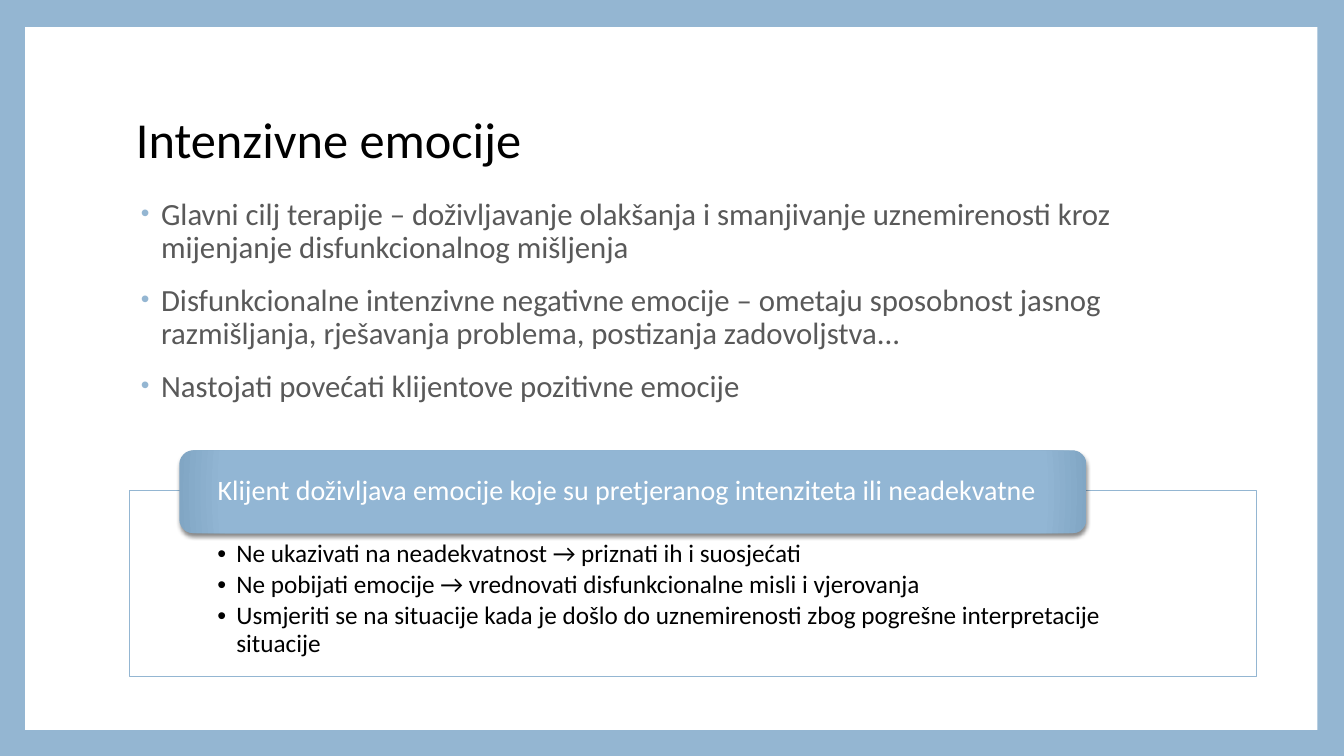
from dataclasses import dataclass

from lxml.etree import SubElement
from pptx import Presentation
from pptx.dml.color import RGBColor
from pptx.enum.shapes import MSO_SHAPE
from pptx.enum.text import MSO_ANCHOR, PP_ALIGN
from pptx.oxml import parse_xml
from pptx.oxml.ns import nsdecls, qn
from pptx.util import Pt


@dataclass(frozen=True)
class Theme:
    font: str = "Calibri"
    accent: str = "94B6D2"
    accent_mid: str = "92B6D4"
    accent_dark: str = "81A6C4"
    white: str = "FFFFFF"
    black: str = "000000"
    grey: str = "595959"
    title_size: float = 36
    body_size: float = 22
    tab_size: float = 20
    panel_size: float = 18


THEME = Theme()

TITLE = "Intenzivne emocije"
GOALS = [
    "Glavni cilj terapije – doživljavanje olakšanja i smanjivanje uznemirenosti kroz "
    "mijenjanje disfunkcionalnog mišljenja",
    "Disfunkcionalne intenzivne negativne emocije – ometaju sposobnost jasnog "
    "razmišljanja, rješavanja problema, postizanja zadovoljstva...",
    "Nastojati povećati klijentove pozitivne emocije",
]
SITUATION = "Klijent doživljava emocije koje su pretjeranog intenziteta ili neadekvatne"
ADVICE = [
    "Ne ukazivati na neadekvatnost → priznati ih i suosjećati",
    "Ne pobijati emocije → vrednovati disfunkcionalne misli i vjerovanja",
    "Usmjeriti se na situacije kada je došlo do uznemirenosti zbog pogrešne "
    "interpretacije situacije",
]


def add_bullet(paragraph, margin, hanging, color, percent):
    properties = paragraph._p.get_or_add_pPr()
    properties.set("marL", str(Pt(margin)))
    properties.set("indent", str(-Pt(hanging)))
    bullet_color = SubElement(properties, qn("a:buClr"))
    SubElement(bullet_color, qn("a:srgbClr"), val=color)
    SubElement(properties, qn("a:buSzPct"), val=str(percent * 1000))
    SubElement(properties, qn("a:buFont"), typeface="Arial")
    SubElement(properties, qn("a:buChar"), char="•")


def write_text(shape, lines, size, color, insets=(7.2, 3.6, 7.2, 3.6),
               anchor=MSO_ANCHOR.TOP, before=0, after=0, bullet=None):
    """Fill a shape with one paragraph per line; bullet holds add_bullet's options."""
    frame = shape.text_frame
    frame.word_wrap = True
    frame.vertical_anchor = anchor
    frame.margin_left, frame.margin_top, frame.margin_right, frame.margin_bottom = map(Pt, insets)
    for index, line in enumerate(lines):
        paragraph = frame.add_paragraph() if index else frame.paragraphs[0]
        paragraph.alignment = PP_ALIGN.LEFT
        paragraph.line_spacing = 0.9
        paragraph.space_before = Pt(before if index else 0)
        paragraph.space_after = Pt(after)
        if bullet:
            add_bullet(paragraph, **bullet)
        run = paragraph.add_run()
        run.text = line
        run.font.name = THEME.font
        run.font.size = Pt(size)
        run.font.color.rgb = RGBColor.from_string(color)


def add_box(slide, kind, box, fill):
    shape = slide.shapes.add_shape(kind, *map(Pt, box))
    shape.shadow.inherit = False
    shape.fill.solid()
    shape.fill.fore_color.rgb = RGBColor.from_string(fill)
    shape.line.fill.background()
    return shape


def add_frame(slide, box):
    slide.background.fill.solid()
    slide.background.fill.fore_color.rgb = RGBColor.from_string(THEME.accent)
    add_box(slide, MSO_SHAPE.RECTANGLE, box, THEME.white)


def add_title(slide, box):
    write_text(slide.shapes.add_textbox(*map(Pt, box)), [TITLE], THEME.title_size,
               THEME.black, anchor=MSO_ANCHOR.MIDDLE)


def add_goals(slide, box):
    write_text(slide.shapes.add_textbox(*map(Pt, box)), GOALS, THEME.body_size,
               THEME.grey, before=14,
               bullet=dict(margin=18, hanging=14.4, color=THEME.accent, percent=80))


def shade_tab(shape):
    """Give the tab its radial gradient and a soft shadow below."""
    properties = shape._element.spPr
    stops = [(0, THEME.accent), (90, THEME.accent_mid), (100, THEME.accent_dark)]
    stop_xml = "".join(
        f'<a:gs pos="{position * 1000}"><a:srgbClr val="{color}"/></a:gs>'
        for position, color in stops)
    gradient = parse_xml(
        f'<a:gradFill {nsdecls("a")} rotWithShape="1"><a:gsLst>{stop_xml}</a:gsLst>'
        '<a:path path="circle"><a:fillToRect l="100000" t="100000" r="100000" b="100000"/>'
        '</a:path></a:gradFill>')
    properties.replace(properties.find(qn("a:solidFill")), gradient)
    properties.find(qn("a:effectLst")).append(parse_xml(
        f'<a:outerShdw {nsdecls("a")} blurRad="{Pt(3)}" dist="{Pt(2)}" dir="5400000" '
        f'rotWithShape="0"><a:srgbClr val="{THEME.black}"><a:alpha val="45000"/>'
        '</a:srgbClr></a:outerShdw>'))


def add_advice(slide, box):
    """Outlined panel of advice with a tab that overlaps its top edge."""
    left, top, _, _ = box
    panel = add_box(slide, MSO_SHAPE.RECTANGLE, box, THEME.white)
    fill_color = panel._element.spPr.find(qn("a:solidFill"))[0]
    SubElement(fill_color, qn("a:alpha"), val="90000")
    panel.line.color.rgb = RGBColor.from_string(THEME.accent)
    panel.line.width = Pt(0.79)
    write_text(panel, ADVICE, THEME.panel_size, THEME.black,
               insets=(62.64, 36, 62.64, 10), after=2.7,
               bullet=dict(margin=13.5, hanging=13.5, color=THEME.black, percent=100))

    tab_height = 59
    tab = add_box(slide, MSO_SHAPE.ROUNDED_RECTANGLE,
                  (left + 35.4, top - tab_height / 2 + 0.7, 648, tab_height), THEME.accent)
    shade_tab(tab)
    write_text(tab, [SITUATION], THEME.tab_size, THEME.white,
               insets=(24.5, 0, 24.5, 0), anchor=MSO_ANCHOR.MIDDLE)


def main():
    presentation = Presentation()
    presentation.slide_width, presentation.slide_height = Pt(960), Pt(540)
    slide = presentation.slides.add_slide(presentation.slide_layouts[6])
    add_frame(slide, (18, 19.4, 923, 502))
    add_title(slide, (90, 48, 777.6, 106.6))
    add_goals(slide, (90, 138.2, 777.6, 342))
    add_advice(slide, (92.7, 350.6, 805, 132.5))
    presentation.save("out.pptx")


if __name__ == "__main__":
    main()
